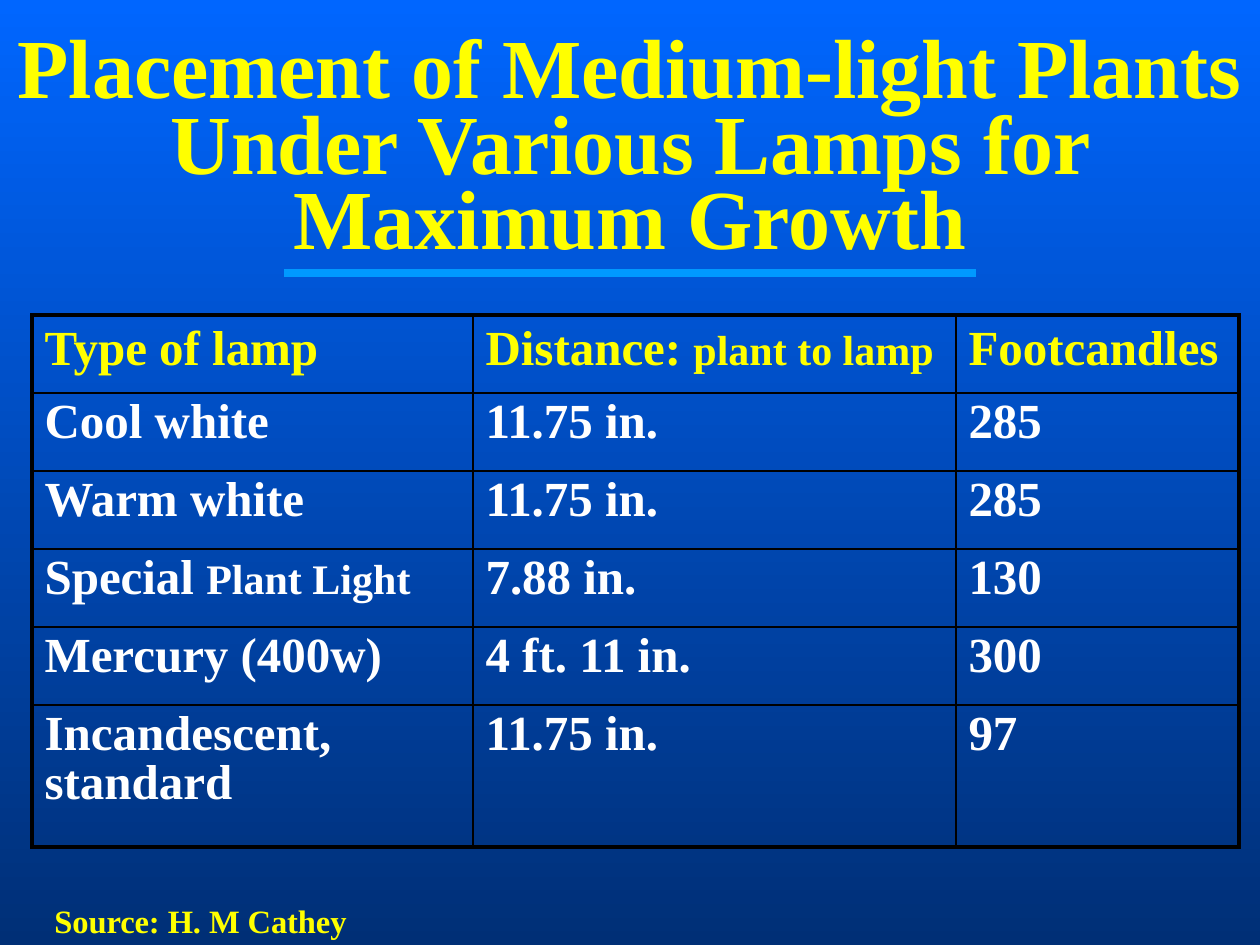
"""Build a slide with a table of lamp distances for medium-light plants."""
from lxml import etree
from pptx import Presentation, util as u
from pptx.dml.color import RGBColor
from pptx.enum import shapes, text
from pptx.oxml import ns

COLORS = {"top": "0066FF", "bottom": "002F76", "accent": "FFFF00",
          "body": "FFFFFF", "rule": "0099FF", "border": "000000"}
FONT = "Times New Roman"
TITLE = "Placement of Medium-light Plants Under Various Lamps for Maximum Growth"
SOURCE = "Source: H. M Cathey"
ROWS = [
    [[("Type of lamp", 28)], [("Distance: ", 28), ("plant to lamp", 24)], [("Footcandles", 28)]],
    [[("Cool white", 28)], [("11.75 in.", 28)], [("285", 28)]],
    [[("Warm white", 28)], [("11.75 in.", 28)], [("285", 28)]],
    [[("Special ", 28), ("Plant Light", 24)], [("7.88 in.", 28)], [("130", 28)]],
    [[("Mercury (400w)", 28)], [("4 ft. 11 in.", 28)], [("300", 28)]],
    [[("Incandescent, standard", 28)], [("11.75 in.", 28)], [("97", 28)]],
]
COLUMN_WIDTHS = [441, 483, 283]
ROW_HEIGHTS = [78] * 5 + [142]
PX = 914400 // 126


def px(*lengths):
    return [u.Emu(length * PX) for length in lengths]


def rgb(name):
    return RGBColor.from_string(COLORS[name])


def write(frame, runs, color="accent", align=text.PP_ALIGN.LEFT,
          spacing=1.0, before=0, baseline=0):
    frame.word_wrap = True
    paragraph = frame.paragraphs[0]
    paragraph.alignment = align
    paragraph.line_spacing = spacing
    paragraph.space_before = u.Pt(before)
    for words, size in runs:
        run = paragraph.add_run()
        run.text = words
        font = run.font
        font.name, font.size, font.bold = FONT, u.Pt(size), True
        font.color.rgb = rgb(color)
        if baseline:
            font._element.set("baseline", str(baseline))


def set_borders(cell, outer_sides):
    properties = cell._tc.get_or_add_tcPr()
    for side in "LRTB":
        width = u.Pt(2.25 if side in outer_sides else 1)
        line = etree.SubElement(properties, ns.qn(f"a:ln{side}"), w=str(int(width)))
        fill = etree.SubElement(line, ns.qn("a:solidFill"))
        etree.SubElement(fill, ns.qn("a:srgbClr"), val=COLORS["border"])


def add_lamp_table(slide):
    size = px(32, 315, sum(COLUMN_WIDTHS), sum(ROW_HEIGHTS))
    table = slide.shapes.add_table(len(ROWS), len(COLUMN_WIDTHS), *size).table
    table.first_row = table.horz_banding = False
    for column, width in zip(table.columns, px(*COLUMN_WIDTHS)):
        column.width = width
    for row, height in zip(table.rows, px(*ROW_HEIGHTS)):
        row.height = height
    last_row, last_column = len(ROWS) - 1, len(COLUMN_WIDTHS) - 1
    for i, row in enumerate(ROWS):
        for j, runs in enumerate(row):
            cell = table.cell(i, j)
            edges = {"T": i == 0, "B": i == last_row, "L": j == 0, "R": j == last_column}
            set_borders(cell, [side for side, outer in edges.items() if outer])
            cell.fill.background()
            write(cell.text_frame, runs, color="body" if i else "accent",
                  spacing=0.9 if i else 1.0, before=5.6)


def main():
    presentation = Presentation()
    presentation.slide_width, presentation.slide_height = px(1260, 945)
    slide = presentation.slides.add_slide(presentation.slide_layouts[6])

    background = slide.background.fill
    background.gradient()
    background.gradient_angle = 270
    for stop, name in zip(background.gradient_stops, ("top", "bottom")):
        stop.color.rgb = rgb(name)

    title = slide.shapes.add_textbox(*px(0, 73, 1260, 157)).text_frame
    title.vertical_anchor = text.MSO_ANCHOR.MIDDLE
    write(title, [(TITLE, 48)], align=text.PP_ALIGN.CENTER, spacing=0.75)

    add_lamp_table(slide)

    rule = slide.shapes.add_connector(shapes.MSO_CONNECTOR.STRAIGHT, *px(284, 273, 976, 273))
    rule.line.color.rgb = rgb("rule")
    rule.line.width = u.Pt(4.5)
    etree.SubElement(rule._element.spPr, ns.qn("a:effectLst"))

    source = slide.shapes.add_textbox(*px(42, 888, 598, 57)).text_frame
    write(source, [(SOURCE, 32)], before=16, baseline=30000)
    presentation.save("out.pptx")


if __name__ == "__main__":
    main()
